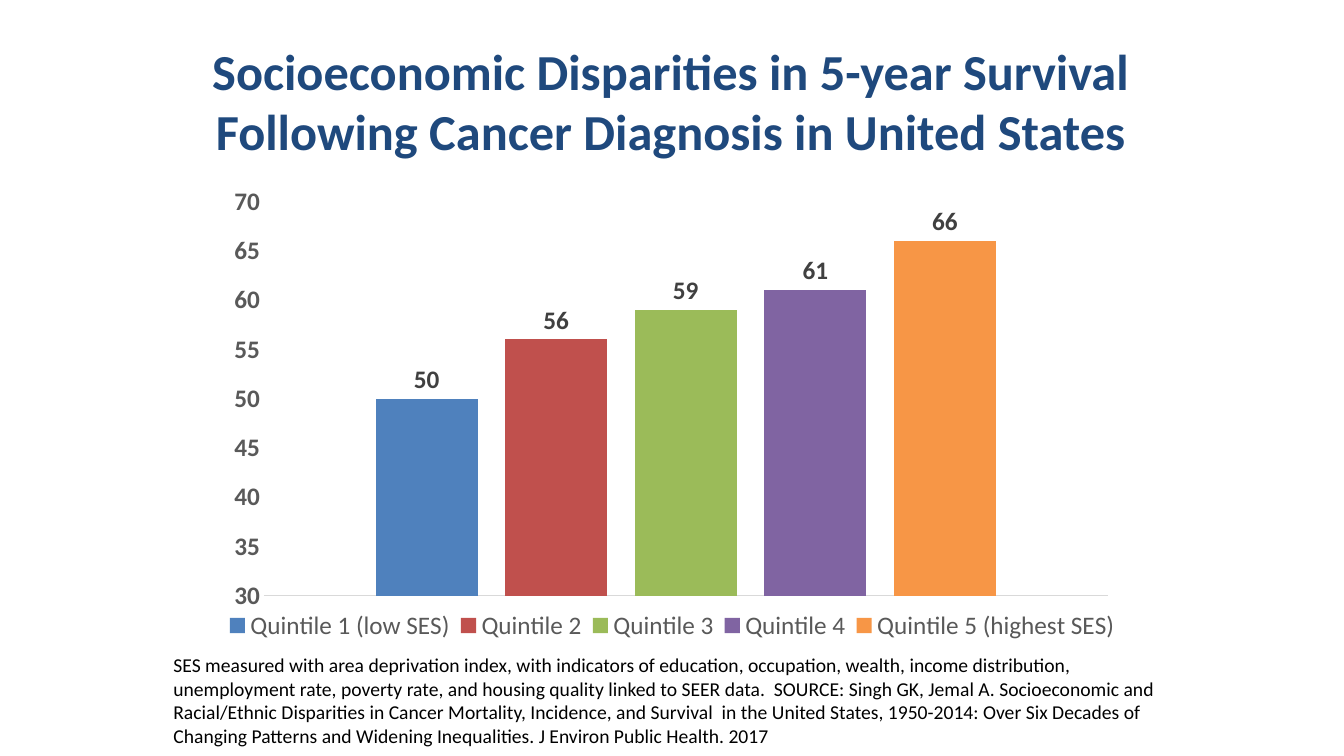
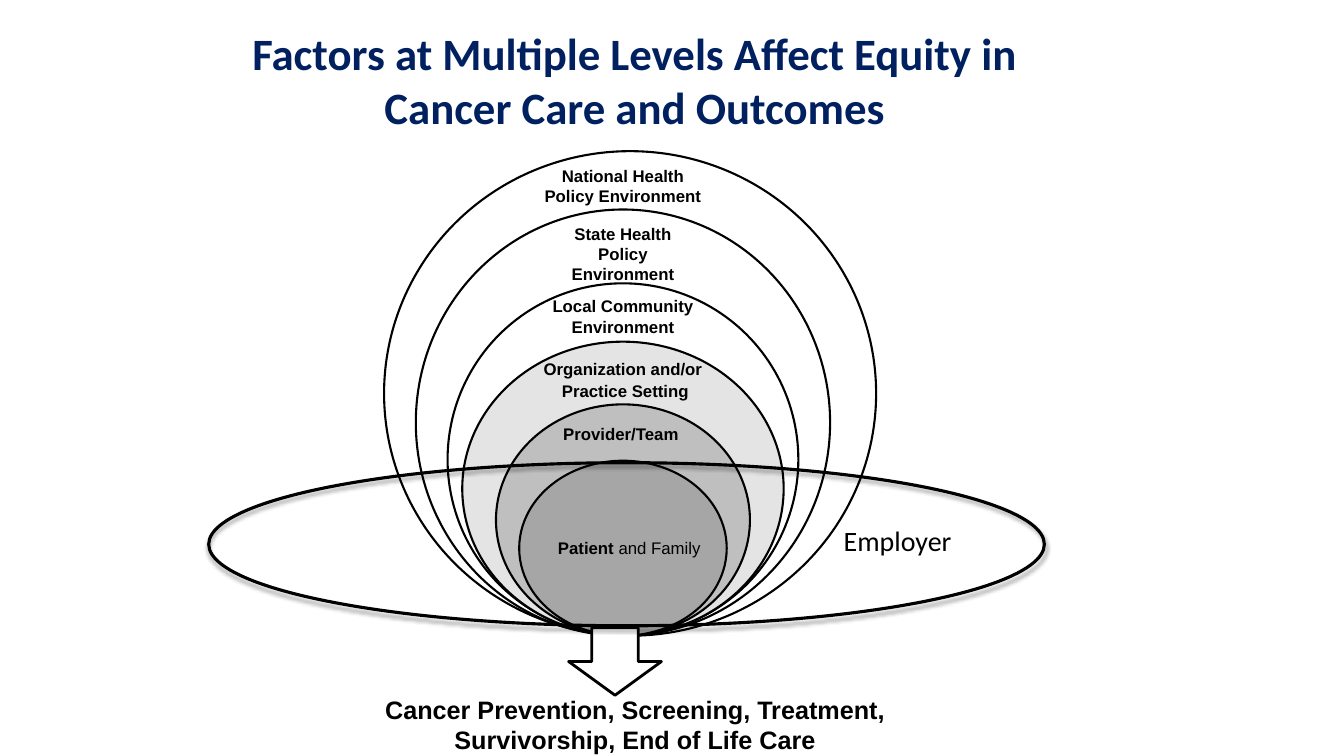
from dataclasses import dataclass

from lxml.etree import SubElement
from pptx import Presentation
from pptx.chart.data import CategoryChartData
from pptx.dml.color import RGBColor
from pptx.enum.chart import (XL_CHART_TYPE, XL_LABEL_POSITION,
                             XL_LEGEND_POSITION, XL_TICK_MARK)
from pptx.enum.shapes import MSO_SHAPE
from pptx.enum.text import MSO_ANCHOR, PP_ALIGN
from pptx.oxml.ns import qn
from pptx.util import Cm, Pt

HUES = {
    "blue": "1F497D", "navy": "002060", "black": "000000", "white": "FFFFFF",
    "axis": "595959", "rule": "D9D9D9", "label": "404040",
    "pale": "D9D9D9", "mid": "BFBFBF", "dark": "A6A6A6",
    "q1": "4F81BD", "q2": "C0504D", "q3": "9BBB59", "q4": "8064A2", "q5": "F79646",
}
SANS, ARIAL = "Calibri", "Arial"
AXIS = 15.7    # centre line of the nested rings, cm
BASE = 16.02   # where all rings touch, cm


@dataclass
class Box:
    left: float
    top: float
    width: float
    height: float

    def cm(self) -> tuple:
        return Cm(self.left), Cm(self.top), Cm(self.width), Cm(self.height)


@dataclass
class Run:
    text: str
    bold: bool = True


@dataclass
class Style:
    size: float
    face: str = SANS
    hue: str = "black"
    align: PP_ALIGN = PP_ALIGN.CENTER
    anchor: MSO_ANCHOR = MSO_ANCHOR.TOP
    wrap: bool = True
    inset: bool = True


@dataclass
class Ring:
    top: float
    width: float
    mid: float = AXIS
    hue: str = ""
    alpha: int = 100


@dataclass
class Label:
    runs: list
    top: float
    width: float
    mid: float = AXIS
    wrap: bool = False


@dataclass
class Bar:
    name: str
    value: int
    hue: str


BARS = [
    Bar("Quintile 1 (low SES)", 50, "q1"),
    Bar("Quintile 2", 56, "q2"),
    Bar("Quintile 3", 59, "q3"),
    Bar("Quintile 4", 61, "q4"),
    Bar("Quintile 5 (highest SES)", 66, "q5"),
]
RINGS = [
    Ring(3.81, 12.4, 15.88),
    Ring(5.28, 10.44),
    Ring(7.14, 8.84),
    Ring(8.61, 8.1, hue="pale", alpha=71),
    Ring(10.19, 6.4, hue="mid"),
    Ring(11.61, 5.23, hue="dark"),
]
LABELS = [
    Label([Run("National Health Policy Environment")], 4.04, 4.62, wrap=True),
    Label([Run("State Health Policy Environment")], 5.51, 4.27, wrap=True),
    Label([Run("Local Community Environment")], 7.34, 4.27, wrap=True),
    Label([Run("Organization and/or")], 9.04, 4.1),
    Label([Run("Practice Setting")], 9.6, 3.3, 15.76),
    Label([Run("Provider/Team")], 10.67, 3.05, 15.65),
    Label([Run("Patient"), Run(" and Family", False)], 13.54, 3.75, 15.86),
]
NOTE = ("SES measured with area deprivation index, with indicators of education, "
        "occupation, wealth, income distribution, unemployment rate, poverty rate, "
        "and housing quality linked to SEER data.  SOURCE: Singh GK, Jemal A. "
        "Socioeconomic and Racial/Ethnic Disparities in Cancer Mortality, Incidence, "
        "and Survival  in the United States, 1950-2014: Over Six Decades of Changing "
        "Patterns and Widening Inequalities. J Environ Public Health. 2017")


def color(hue: str) -> RGBColor:
    return RGBColor.from_string(HUES[hue])


def ink(font, size: float, hue: str, bold: bool = False, face: str = SANS) -> None:
    font.name, font.size, font.bold = face, Pt(size), bold
    font.color.rgb = color(hue)


def write(slide, box: Box, runs: list, style: Style) -> None:
    frame = slide.shapes.add_textbox(*box.cm()).text_frame
    frame.word_wrap = style.wrap
    frame.vertical_anchor = style.anchor
    if not style.inset:
        frame.margin_left = frame.margin_right = 0
        frame.margin_top = frame.margin_bottom = 0
    para = frame.paragraphs[0]
    para.alignment = style.align
    for item in runs:
        run = para.add_run()
        run.text = item.text
        ink(run.font, style.size, style.hue, item.bold, style.face)


def title(slide, box: Box, text: str, size: float, hue: str) -> None:
    write(slide, box, [Run(text)], Style(size, hue=hue, anchor=MSO_ANCHOR.MIDDLE))


def draw(slide, kind: MSO_SHAPE, box: Box, weight: float, hue: str = "", alpha: int = 100):
    """Add a black-outlined shape, hollow unless a hue is given."""
    shape = slide.shapes.add_shape(kind, *box.cm())
    shape.shadow.inherit = False
    if hue:
        shape.fill.solid()
        shape.fill.fore_color.rgb = color(hue)
        if alpha < 100:
            tint = shape._element.spPr.find(".//" + qn("a:srgbClr"))
            SubElement(tint, qn("a:alpha"), val=str(alpha * 1000))
    else:
        shape.fill.background()
    shape.line.color.rgb = color("black")
    shape.line.width = Pt(weight)
    return shape


def shade(shape) -> None:
    """Give the shape a soft shadow straight below it."""
    group = shape._element.spPr.find(qn("a:effectLst"))
    outer = SubElement(group, qn("a:outerShdw"), blurRad=str(Pt(3.1)),
                       dist=str(Pt(1.8)), dir="5400000", rotWithShape="0")
    tint = SubElement(outer, qn("a:srgbClr"), val=HUES["black"])
    SubElement(tint, qn("a:alpha"), val="35000")


def place(node, index: int, box: tuple, inner: bool = False) -> None:
    """Fix a chart part at x, y, w, h, as fractions of the chart."""
    for old in node.findall(qn("c:layout")):
        node.remove(old)
    layout = SubElement(node, qn("c:layout"))
    node.insert(index, layout)
    manual = SubElement(layout, qn("c:manualLayout"))
    if inner:
        SubElement(manual, qn("c:layoutTarget"), val="inner")
    for name in ("xMode", "yMode"):
        SubElement(manual, qn("c:" + name), val="edge")
    for name, value in zip("xywh", box):
        SubElement(manual, qn("c:" + name), val=str(value))


def plot(slide, box: Box) -> None:
    data = CategoryChartData()
    data.categories = [" "]
    for bar in BARS:
        data.add_series(bar.name, [bar.value])
    chart = slide.shapes.add_chart(
        XL_CHART_TYPE.COLUMN_CLUSTERED, *box.cm(), data).chart
    ink(chart.font, 10, "black")
    chart.has_title = False

    chart.has_legend = True
    legend = chart.legend
    legend.position = XL_LEGEND_POSITION.BOTTOM
    legend.include_in_layout = False
    ink(legend.font, 18, "axis")
    place(legend._element, 1, (0.0, 0.86, 1.0, 0.08))

    cats, vals = chart.category_axis, chart.value_axis
    for axis in (cats, vals):
        axis.major_tick_mark = axis.minor_tick_mark = XL_TICK_MARK.NONE
        axis.has_major_gridlines = False
    ink(cats.tick_labels.font, 12, "axis")
    cats.format.line.color.rgb = color("rule")
    cats.format.line.width = Pt(0.75)
    ink(vals.tick_labels.font, 18, "axis", True)
    vals.format.line.fill.background()
    vals.minimum_scale, vals.maximum_scale, vals.major_unit = 30, 70, 5

    group = chart.plots[0]
    group.gap_width, group.overlap, group.vary_by_categories = 219, -27, False
    for bar, series in zip(BARS, group.series):
        series.format.fill.solid()
        series.format.fill.fore_color.rgb = color(bar.hue)
        labels = series.data_labels
        labels.show_value = True
        labels.position = XL_LABEL_POSITION.OUTSIDE_END
        ink(labels.font, 18, "label", True)
    area = chart._chartSpace.find(".//" + qn("c:plotArea"))
    place(area, 0, (0.05, 0.05, 0.93, 0.79), inner=True)


def chances(slide) -> None:
    """Slide with survival by quintile."""
    title(slide, Box(4.72, 0.94, 24.38, 3.18),
          "Socioeconomic Disparities in 5-year Survival Following Cancer "
          "Diagnosis in United States", 36, "blue")
    plot(slide, Box(5.51, 4.45, 22.86, 12.57))
    write(slide, Box(4.37, 16.46, 25.27, 2.39), [Run(NOTE, False)],
          Style(14, align=PP_ALIGN.LEFT, inset=False))


def levels(slide) -> None:
    """Slide with the nested levels of care."""
    for ring in RINGS:
        box = Box(ring.mid - ring.width / 2, ring.top, ring.width, BASE - ring.top)
        draw(slide, MSO_SHAPE.OVAL, box, 1.5, ring.hue, ring.alpha)
    for label in LABELS:
        box = Box(label.mid - label.width / 2, label.top, label.width,
                  1.3 if label.wrap else 0.5)
        write(slide, box, label.runs,
              Style(12, ARIAL, wrap=label.wrap, inset=label.wrap))
    title(slide, Box(4.75, 0.5, 22.5, 3),
          "Factors at Multiple Levels Affect Equity in Cancer Care and Outcomes",
          32, "navy")
    draw(slide, MSO_SHAPE.DOWN_ARROW, Box(14.33, 15.82, 2.34, 1.7), 2, "white")
    write(slide, Box(7.75, 17.37, 16.51, 1.68),
          [Run("Cancer Prevention, Screening, Treatment, Survivorship, "
               "End of Life Care")], Style(18, ARIAL))
    shade(draw(slide, MSO_SHAPE.OVAL, Box(5.26, 11.66, 21.06, 4.11), 2.25))
    write(slide, Box(21.01, 12.34, 3.6, 2.54), [Run("Employer", False)],
          Style(20, align=PP_ALIGN.LEFT, anchor=MSO_ANCHOR.MIDDLE))


def main() -> None:
    deck = Presentation()
    deck.slide_width, deck.slide_height = Cm(33.87), Cm(19.05)
    for build in (chances, levels):
        build(deck.slides.add_slide(deck.slide_layouts[6]))
    deck.save("out.pptx")


if __name__ == "__main__":
    main()
